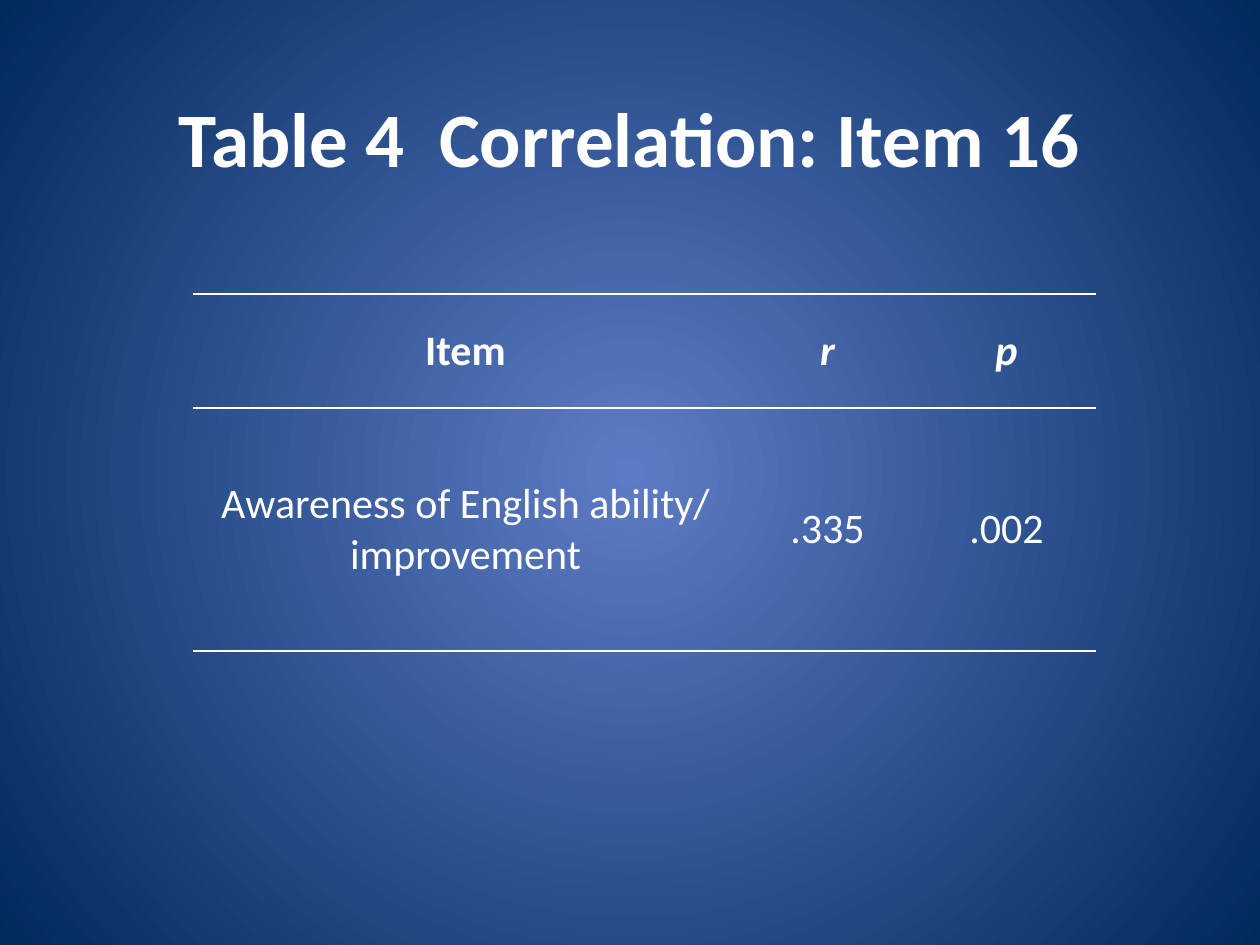
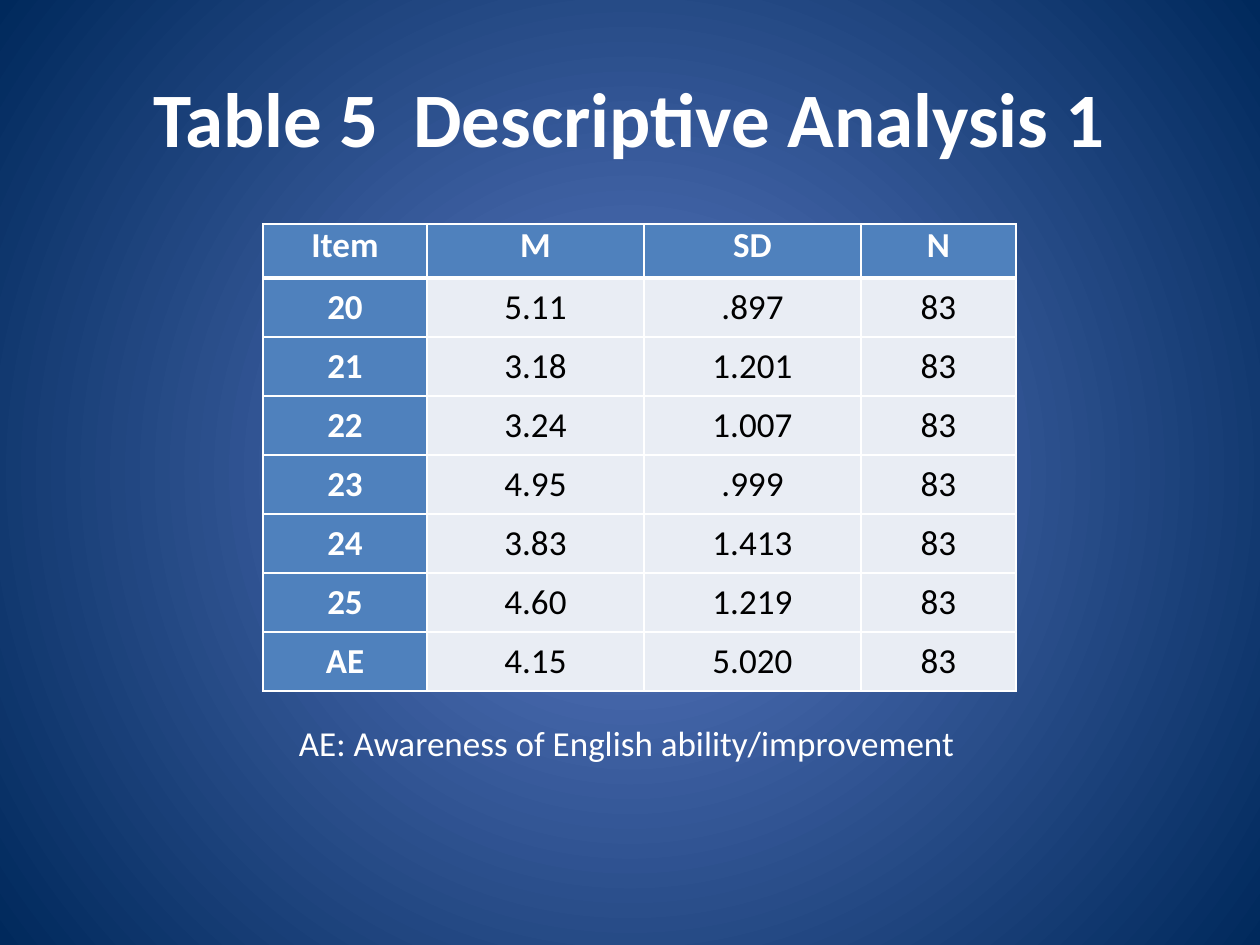
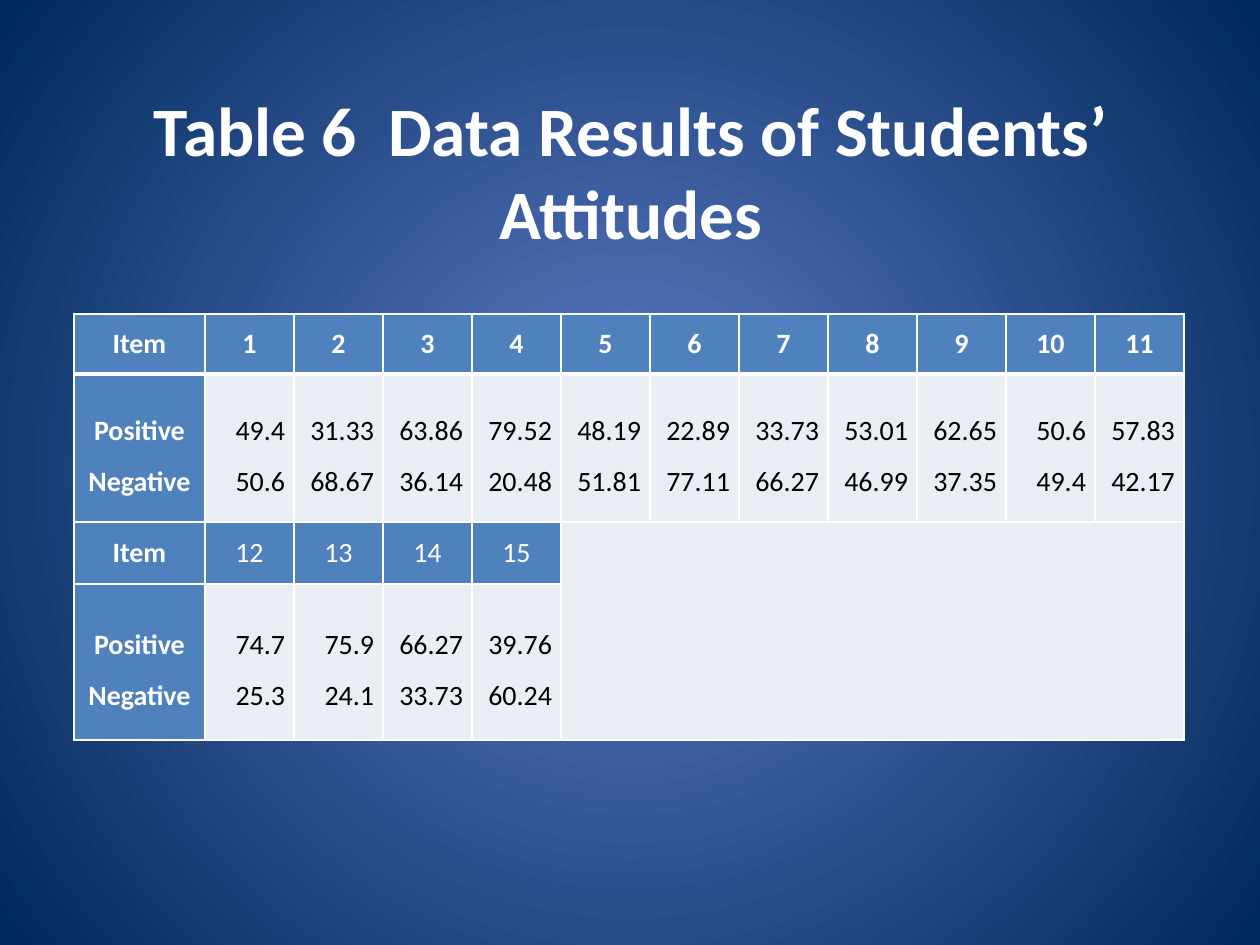
import pptx
import pptx.dml.color
import pptx.enum.text
import pptx.oxml
import pptx.oxml.ns
import pptx.util

PX = 914400 / 126
FONT = "Calibri"
COLORS = {"white": "FFFFFF", "black": "000000", "label": "4F81BD",
          "body": "E9EDF4", "glow": "5E7CC5", "edge": "00295C"}
RGB = {name: pptx.dml.color.RGBColor.from_string(code) for name, code in COLORS.items()}
ALIGN = pptx.enum.text.PP_ALIGN
MIDDLE = pptx.enum.text.MSO_ANCHOR.MIDDLE
NS = pptx.oxml.ns.nsdecls("a")


def add_text(slide, text, box, size, bold=False, align=ALIGN.CENTER):
    frame = slide.shapes.add_textbox(*[round(length * PX) for length in box]).text_frame
    frame.word_wrap = True
    frame.vertical_anchor = MIDDLE
    frame.text = text
    paragraph = frame.paragraphs[0]
    paragraph.alignment = align
    paragraph.font.name = FONT
    paragraph.font.size = pptx.util.Pt(size)
    paragraph.font.bold = bold
    paragraph.font.color.rgb = RGB["white"]
    return frame


def add_grid(slide, left, top, widths, heights, rows, size, label_rows=(0,), ruled=False):
    box = [round(length * PX) for length in (left, top, sum(widths), sum(heights))]
    table = slide.shapes.add_table(len(rows), len(widths), *box).table
    table.horz_banding = False
    table.first_row = False
    for column, width in zip(table.columns, widths):
        column.width = round(width * PX)
    for row, height in zip(table.rows, heights):
        row.height = round(height * PX)
    for r, texts in enumerate(rows):
        for c, text in enumerate(texts):
            cell = table.cell(r, c)
            label = text != "" and (r in label_rows or c == 0)
            cell.margin_left = cell.margin_right = round(9 * PX)
            cell.margin_top = cell.margin_bottom = 0
            cell.vertical_anchor = MIDDLE
            side = 0 if ruled else 1
            header_line = 1 if ruled else 3
            edges = {"lnL": side, "lnR": side,
                     "lnT": header_line if r == 1 else 1,
                     "lnB": header_line if r == 0 else 1}
            for edge, points in edges.items():
                paint = (f'<a:solidFill><a:srgbClr val="{COLORS["white"]}"/></a:solidFill>'
                         if points else "<a:noFill/>")
                cell._tc.get_or_add_tcPr().append(pptx.oxml.parse_xml(
                    f'<a:{edge} {NS} w="{points * 12700}">{paint}</a:{edge}>'))
            if ruled:
                cell.fill.background()
            else:
                cell.fill.solid()
                cell.fill.fore_color.rgb = RGB["label" if label else "body"]
            cell.text = text
            for paragraph in cell.text_frame.paragraphs:
                paragraph.alignment = ALIGN.CENTER
                paragraph.font.name = FONT
                paragraph.font.size = pptx.util.Pt(size)
                paragraph.font.bold = r == 0 or (c == 0 and not ruled)
                paragraph.font.color.rgb = RGB["white" if ruled or label else "black"]
    return table


prs = pptx.Presentation()
prs.slide_width = pptx.util.Inches(10)
prs.slide_height = pptx.util.Inches(7.5)
blank = prs.slide_layouts[6]

backdrop = prs.slide_master.background.fill
backdrop.gradient()
for stop, name in zip(backdrop.gradient_stops, ("glow", "edge")):
    stop.color.rgb = RGB[name]
gradient = prs.slide_master._element.find(".//" + pptx.oxml.ns.qn("a:gradFill"))
gradient.replace(gradient.find(pptx.oxml.ns.qn("a:lin")), pptx.oxml.parse_xml(
    f'<a:path {NS} path="circle">'
    '<a:fillToRect l="50000" t="50000" r="50000" b="50000"/></a:path>'))

correlation = prs.slides.add_slide(blank)
add_text(correlation, "Table 4  Correlation: Item 16", (63, 38, 1134, 197), 44, True)
correlation_table = add_grid(
    correlation, 193, 294, [545, 179, 179], [114, 243],
    [["Item", "r", "p"],
     ["Awareness of English ability/\nimprovement", ".335", ".002"]],
    24, ruled=True)
for c in (1, 2):
    correlation_table.cell(0, c).text_frame.paragraphs[0].font.italic = True

descriptive = prs.slides.add_slide(blank)
add_text(descriptive, "Table 5  Descriptive Analysis 1", (63, 38, 1134, 158), 44, True)
statistics = [
    ["20", "5.11", ".897"],
    ["21", "3.18", "1.201"],
    ["22", "3.24", "1.007"],
    ["23", "4.95", ".999"],
    ["24", "3.83", "1.413"],
    ["25", "4.60", "1.219"],
    ["AE", "4.15", "5.020"],
]
descriptive_table = add_grid(
    descriptive, 263, 224, [164, 217, 217, 155], [54] + [59] * len(statistics),
    [["Item", "M", "SD", "N"]] + [row + ["83"] for row in statistics], 20)
for c in range(4):
    descriptive_table.cell(0, c).vertical_anchor = pptx.enum.text.MSO_ANCHOR.TOP
note = add_text(descriptive, "AE: Awareness of English ability/improvement",
                (299, 720, 720, 44), 20, align=ALIGN.LEFT)
note.margin_left = 0

attitudes = prs.slides.add_slide(blank)
add_text(attitudes, "Table 6  Data Results of Students’ Attitudes", (64, 86, 1134, 169), 39.6, True)
positive = ["49.4", "31.33", "63.86", "79.52", "48.19", "22.89", "33.73", "53.01",
            "62.65", "50.6", "57.83", "74.7", "75.9", "66.27", "39.76"]
negative = ["50.6", "68.67", "36.14", "20.48", "51.81", "77.11", "66.27", "46.99",
            "37.35", "49.4", "42.17", "25.3", "24.1", "33.73", "60.24"]
items = [str(number) for number in range(1, 16)]
shares = [f"{yes}\n{no}" for yes, no in zip(positive, negative)]
answers = "Positive\nNegative"
unused = [""] * 7
attitude_table = add_grid(
    attitudes, 74, 314, [131] + [89] * 11, [60, 148, 62, 156],
    [["Item"] + items[:11], [answers] + shares[:11],
     ["Item"] + items[11:] + unused, [answers] + shares[11:] + unused],
    16, label_rows=(0, 2))
for r in (1, 3):
    for c in range(12):
        for paragraph in attitude_table.cell(r, c).text_frame.paragraphs:
            if paragraph.text:
                paragraph.line_spacing = 1.5
                paragraph.alignment = ALIGN.RIGHT if c else ALIGN.CENTER
attitude_table.cell(2, 5).merge(attitude_table.cell(3, 11))

prs.save("out.pptx")
